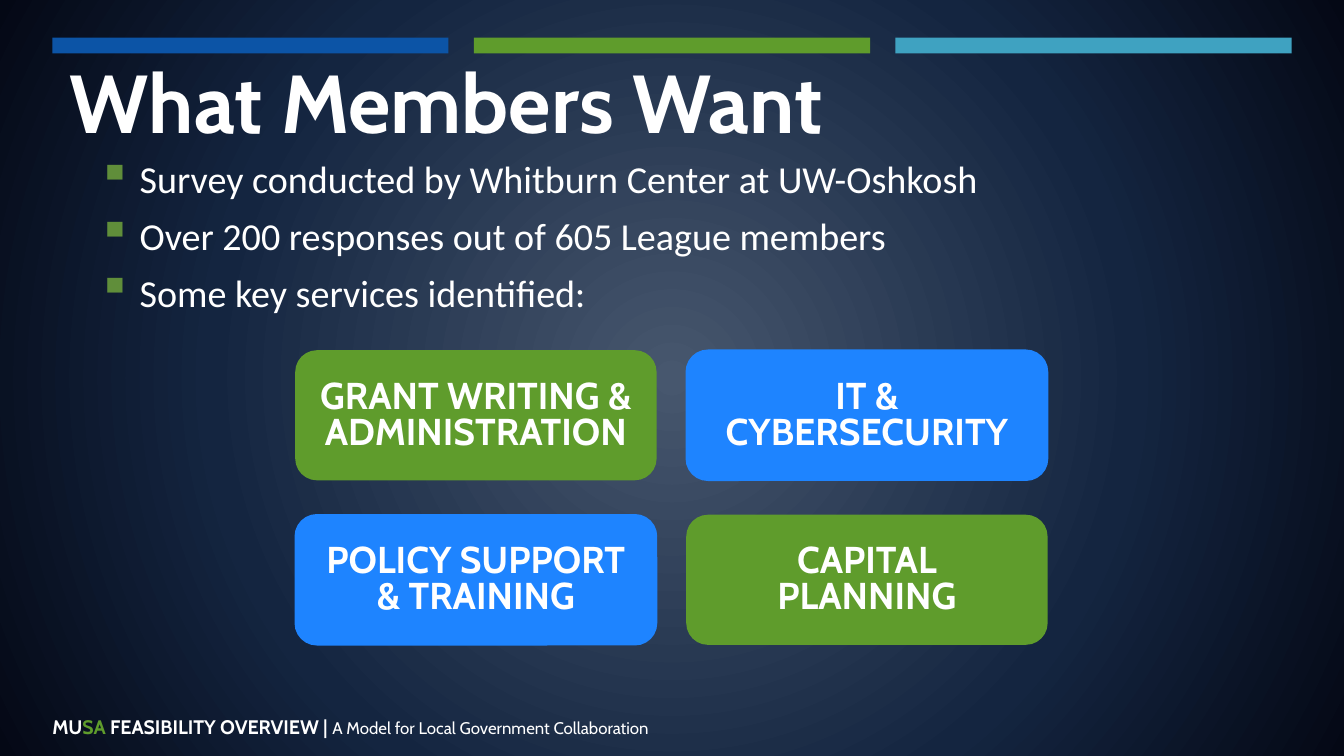
from lxml import etree
from pptx import Presentation
from pptx.dml.color import RGBColor
from pptx.enum.shapes import MSO_SHAPE
from pptx.enum.text import MSO_ANCHOR, PP_ALIGN
from pptx.oxml import parse_xml
from pptx.oxml.ns import qn
from pptx.util import Cm, Pt

RECT = MSO_SHAPE.RECTANGLE
ROUND = MSO_SHAPE.ROUNDED_RECTANGLE
MIDDLE = MSO_ANCHOR.MIDDLE
CENTER = PP_ALIGN.CENTER
WHITE = RGBColor(0xFF, 0xFF, 0xFF)
NAVY = RGBColor(0x0C, 0x54, 0xA6)
GREEN = RGBColor(0x5F, 0x9C, 0x2C)
TEAL = RGBColor(0x3F, 0xA2, 0xC1)
BLUE = RGBColor(0x1E, 0x84, 0xFF)
MOSS = RGBColor(0x60, 0x8E, 0x3A)
SLATE = RGBColor(0x47, 0x57, 0x6E)
NIGHT = RGBColor(0x14, 0x25, 0x40)
BLACK = RGBColor(0x04, 0x08, 0x15)
SPACE = "http://schemas.openxmlformats.org/drawingml/2006/main"


def style(font, size, color=WHITE, bold=False, name="Cabin"):
    font.name = name
    font.size = Pt(size)
    font.bold = bold
    font.color.rgb = color


def paint(slide, stops):
    slide.background.fill.solid()
    solid = next(slide.element.iter(qn("a:solidFill")))
    marks = "".join(
        f'<a:gs pos="{pos * 1000}"><a:srgbClr val="{color}"/></a:gs>'
        for pos, color in stops
    )
    grad = parse_xml(
        f'<a:gradFill xmlns:a="{SPACE}" rotWithShape="1"><a:gsLst>{marks}</a:gsLst>'
        '<a:path path="circle"><a:fillToRect l="50000" t="50000" r="50000" b="50000"/>'
        '</a:path></a:gradFill>'
    )
    solid.getparent().replace(solid, grad)


def add_block(slide, kind, box, color):
    shape = slide.shapes.add_shape(kind, *map(Cm, box))
    shape.shadow.inherit = False
    shape.fill.solid()
    shape.fill.fore_color.rgb = color
    shape.line.fill.background()
    return shape


def add_text(slide, box):
    frame = slide.shapes.add_textbox(*map(Cm, box)).text_frame
    frame.word_wrap = True
    return frame


def add_bars(slide, box, colors, gap):
    left, top, width, height = box
    size = (width - gap * (len(colors) - 1)) / len(colors)
    for i, color in enumerate(colors):
        add_block(slide, RECT, (left + i * (size + gap), top, size, height), color)


def add_title(slide, box, text):
    frame = add_text(slide, box)
    frame.vertical_anchor = MIDDLE
    para = frame.paragraphs[0]
    para.text = text
    para.line_spacing = 0.95
    style(para.font, 44, bold=True)


def add_bullet(para, color):
    props = para._p.get_or_add_pPr()
    props.set("marL", str(Cm(0.79)))
    props.set("indent", str(-Cm(0.79)))
    tint = etree.SubElement(props, qn("a:buClr"))
    etree.SubElement(tint, qn("a:srgbClr"), val=str(color))
    etree.SubElement(props, qn("a:buSzPct"), val="120000")
    etree.SubElement(props, qn("a:buChar"), char="▪")


def add_list(slide, box, items):
    frame = add_text(slide, box)
    for i, item in enumerate(items):
        para = frame.add_paragraph() if i else frame.paragraphs[0]
        para.text = item
        add_bullet(para, MOSS)
        para.line_spacing = 0.75
        if i:
            para.space_before = Pt(12)
        style(para.font, 20.4, name="Calibri")


def add_cards(slide, box, cards, gaps):
    left, top, width, height = box
    wide = (width - gaps[0]) / 2
    high = (height - gaps[1]) / 2
    for i, (text, color) in enumerate(cards):
        row, col = divmod(i, 2)
        place = (left + col * (wide + gaps[0]), top + row * (high + gaps[1]), wide, high)
        card = add_block(slide, ROUND, place, color)
        if color == BLUE:
            card.line.color.rgb = BLUE
            card.line.width = Pt(0.75)
        frame = card.text_frame
        frame.word_wrap = True
        frame.vertical_anchor = MIDDLE
        frame.margin_bottom = Cm(0.08)
        para = frame.paragraphs[0]
        para.text = text
        para.alignment = CENTER
        para.line_spacing = 0.8
        style(para.font, 20, bold=True)


def add_footer(slide, box, parts):
    para = add_text(slide, box).paragraphs[0]
    for text, size, color, bold in parts:
        run = para.add_run()
        run.text = text
        style(run.font, size, color, bold)


def main():
    deck = Presentation()
    deck.slide_width = Cm(25.4)
    deck.slide_height = Cm(14.29)
    slide = deck.slides.add_slide(deck.slide_layouts[6])
    paint(slide, [(0, SLATE), (60, NIGHT), (100, BLACK)])
    add_bars(slide, (0.99, 0.71, 23.42, 0.3), [NAVY, GREEN, TEAL], 0.48)
    add_footer(slide, (0.74, 13.39, 12.8, 0.74), [
        ("MU", 10.5, WHITE, True),
        ("SA", 10.5, GREEN, True),
        (" FEASIBILITY OVERVIEW | ", 10.5, WHITE, True),
        ("A Model for Local Government Collaboration", 9, WHITE, False),
    ])
    add_title(slide, (1.07, 1.07, 23.34, 1.83), "What Members Want")
    add_list(slide, (1.6, 3.02, 23.34, 3.15), [
        "Survey conducted by Whitburn Center at UW-Oshkosh",
        "Over 200 responses out of 605 League members",
        "Some key services identified:",
    ])
    add_cards(slide, (5.58, 6.62, 14.22, 5.57), [
        ("GRANT WRITING & ADMINISTRATION", GREEN),
        ("IT & CYBERSECURITY", BLUE),
        ("POLICY SUPPORT\v& TRAINING", BLUE),
        ("CAPITAL PLANNING", GREEN),
    ], (0.56, 0.65))
    deck.save("out.pptx")


if __name__ == "__main__":
    main()
